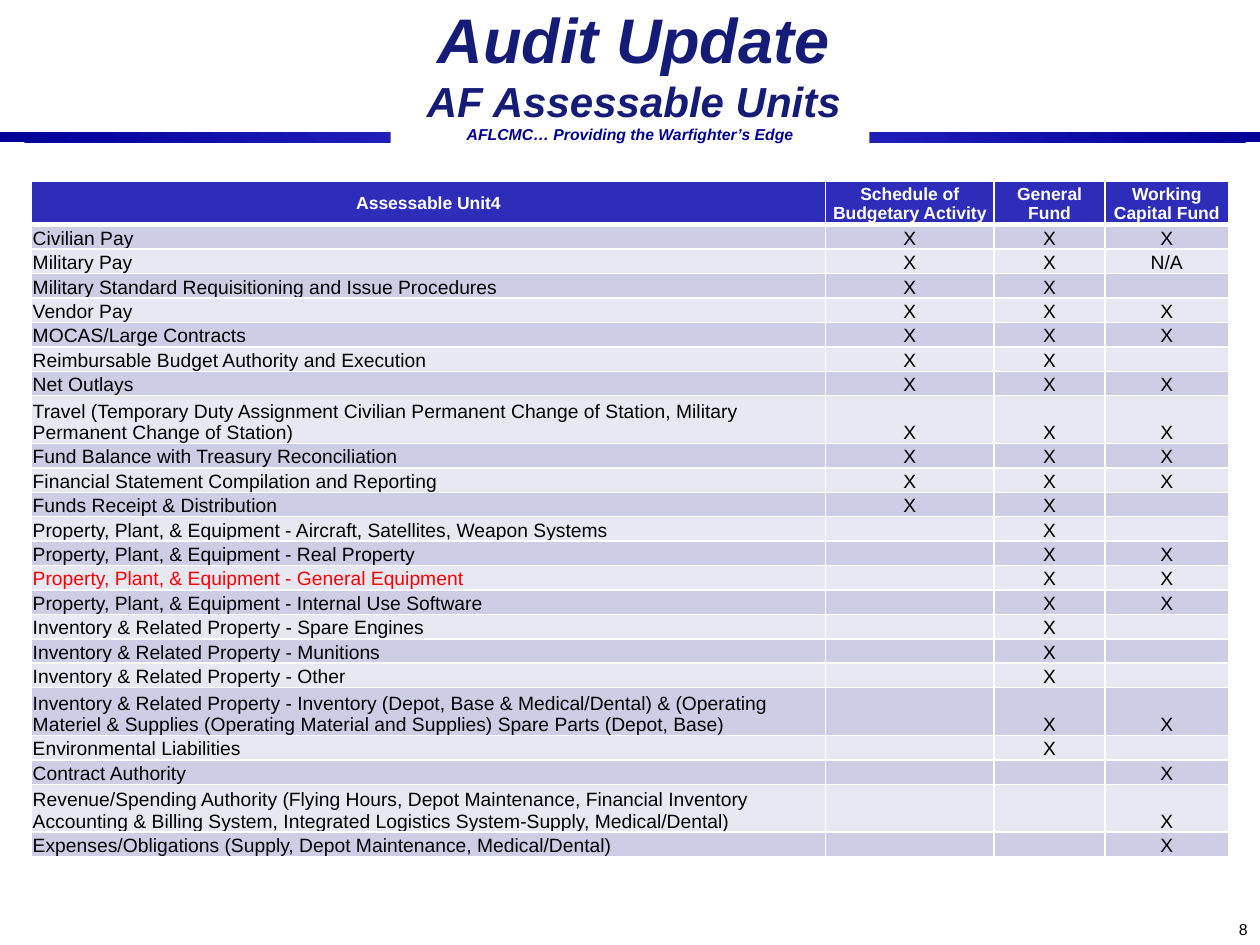
import copy

import pptx
import pptx.dml.color
import pptx.enum.shapes
import pptx.enum.text
import pptx.oxml
import pptx.oxml.ns
import pptx.util
from pptx.dml.color import RGBColor
from pptx.enum.text import MSO_ANCHOR, PP_ALIGN
from pptx.util import Inches

FONT = "Arial"
WHITE = RGBColor(0xFF, 0xFF, 0xFF)
BLACK = RGBColor(0x00, 0x00, 0x00)
RED = RGBColor(0xFF, 0x00, 0x00)
NAVY = RGBColor(0x15, 0x1C, 0x77)
DARK_BLUE = RGBColor(0x00, 0x00, 0x99)
BRIGHT_BLUE = RGBColor(0x33, 0x33, 0xCC)
HEADER_BLUE = RGBColor(0x2D, 0x2D, 0xB9)
BANDS = (RGBColor(0xCD, 0xCD, 0xE6), RGBColor(0xE8, 0xE8, 0xF3))

HEADERS = ("Assessable Unit4", "Schedule of Budgetary Activity", "General Fund",
           "Working Capital Fund")
COLUMN_WIDTHS = (6.3, 1.34, 0.88, 0.98)
HEADER_HEIGHT = 0.34
TWO_LINE_HEIGHT = 0.38
ONE_LINE_LIMIT = 100  # longer names wrap onto a second line

UNITS = (
    ("Civilian Pay", "X", "X", "X"),
    ("Military Pay", "X", "X", "N/A"),
    ("Military Standard Requisitioning and Issue Procedures", "X", "X", ""),
    ("Vendor Pay", "X", "X", "X"),
    ("MOCAS/Large Contracts", "X", "X", "X"),
    ("Reimbursable Budget Authority and Execution", "X", "X", ""),
    ("Net Outlays", "X", "X", "X"),
    ("Travel (Temporary Duty Assignment Civilian Permanent Change of Station, "
     "Military Permanent Change of Station)", "X", "X", "X"),
    ("Fund Balance with Treasury Reconciliation", "X", "X", "X"),
    ("Financial Statement Compilation and Reporting", "X", "X", "X"),
    ("Funds Receipt & Distribution", "X", "X", ""),
    ("Property, Plant, & Equipment - Aircraft, Satellites, Weapon Systems", "", "X", ""),
    ("Property, Plant, & Equipment - Real Property", "", "X", "X"),
    ("Property, Plant, & Equipment - General Equipment", "", "X", "X"),
    ("Property, Plant, & Equipment - Internal Use Software", "", "X", "X"),
    ("Inventory & Related Property - Spare Engines", "", "X", ""),
    ("Inventory & Related Property - Munitions", "", "X", ""),
    ("Inventory & Related Property - Other", "", "X", ""),
    ("Inventory & Related Property - Inventory (Depot, Base & Medical/Dental) & "
     "(Operating Materiel & Supplies (Operating Material and Supplies) Spare Parts "
     "(Depot, Base)", "", "X", "X"),
    ("Environmental Liabilities", "", "X", ""),
    ("Contract Authority", "", "", "X"),
    ("Revenue/Spending Authority (Flying Hours, Depot Maintenance, Financial Inventory "
     "Accounting & Billing System, Integrated Logistics System-Supply, Medical/Dental)",
     "", "", "X"),
    ("Expenses/Obligations (Supply, Depot Maintenance, Medical/Dental)", "", "", "X"),
)
HIGHLIGHTED = "Property, Plant, & Equipment - General Equipment"


def add_run(p, text, size, color, bold=False, italic=False):
    r = p.add_run()
    r.text = text
    r.font.name = FONT
    r.font.size = pptx.util.Pt(size)
    r.font.color.rgb = color
    r.font.bold = bold
    r.font.italic = italic


def add_rectangle(s, left, top, width, height):
    sp = s.shapes.add_shape(pptx.enum.shapes.MSO_SHAPE.RECTANGLE, Inches(left),
                            Inches(top), Inches(width), Inches(height))
    sp.shadow.inherit = False
    sp.line.fill.background()
    return sp


def add_rule(s, left, top, width, height):
    """Draw the band that is dark at both ends and bright in the middle."""
    sp = add_rectangle(s, left, top, width, height)
    sp.fill.gradient()
    sp.fill.gradient_angle = 45
    first, last = sp.fill.gradient_stops
    first.position, last.position = 0, 1
    first.color.rgb = last.color.rgb = DARK_BLUE
    stops = sp._element.spPr.find(".//" + pptx.oxml.ns.qn("a:gsLst"))
    stops.insert(1, copy.deepcopy(stops[0]))
    middle = sp.fill.gradient_stops[1]
    middle.position = 0.5
    middle.color.rgb = BRIGHT_BLUE


def add_motto(s, left, top, width, height):
    sp = add_rectangle(s, left, top, width, height)
    sp.fill.solid()
    sp.fill.fore_color.rgb = WHITE
    tf = sp.text_frame
    tf.word_wrap = True
    tf.margin_top = tf.margin_bottom = 0
    p = tf.paragraphs[0]
    p.alignment = PP_ALIGN.CENTER
    add_run(p, "AFLCMC… Providing the Warfighter’s Edge", 9, DARK_BLUE, True, True)


def fill_title(s, left, top, width, height):
    sp = s.shapes.title
    sp.left, sp.top = Inches(left), Inches(top)
    sp.width, sp.height = Inches(width), Inches(height)
    tf = sp.text_frame
    tf.auto_size = pptx.enum.text.MSO_AUTO_SIZE.NONE
    tf.vertical_anchor = MSO_ANCHOR.MIDDLE
    for i, (text, size) in enumerate((("Audit Update", 36), ("AF Assessable Units", 24))):
        p = tf.add_paragraph() if i else tf.paragraphs[0]
        p.alignment = PP_ALIGN.CENTER
        add_run(p, text, size, NAVY, True, True)


def add_page_number(s, left, top, width, height):
    tf = s.shapes.add_textbox(Inches(left), Inches(top), Inches(width),
                              Inches(height)).text_frame
    tf.word_wrap = True
    tf.vertical_anchor = MSO_ANCHOR.BOTTOM
    p = tf.paragraphs[0]
    p.alignment = PP_ALIGN.RIGHT
    add_run(p, "8", 9, BLACK)


def set_borders(cell, **widths):
    """Draw white borders 1 point wide, or as given by side."""
    tcPr = cell._tc.get_or_add_tcPr()
    for i, side in enumerate(("lnL", "lnR", "lnT", "lnB")):
        width = pptx.util.Pt(widths.get(side, 1))
        tcPr.insert(i, pptx.oxml.parse_xml(
            f'<a:{side} {pptx.oxml.ns.nsdecls("a")} w="{width}"><a:solidFill>'
            f'<a:srgbClr val="{WHITE}"/></a:solidFill></a:{side}>'))


def fill_cell(cell, text, fill, size, color, bold, anchor, alignment):
    cell.fill.solid()
    cell.fill.fore_color.rgb = fill
    cell.margin_left = cell.margin_right = cell.margin_top = Inches(0.01)
    cell.margin_bottom = 0
    cell.vertical_anchor = anchor
    p = cell.text_frame.paragraphs[0]
    p.alignment = alignment
    if text:
        add_run(p, text, size, color, bold)
    else:
        p._p.get_or_add_endParaRPr().set("sz", str(size * 100))


def add_units_table(s, left, top, width, height):
    table = s.shapes.add_table(len(UNITS) + 1, len(HEADERS), Inches(left), Inches(top),
                               Inches(width), Inches(height)).table
    table.horz_banding = False
    for column, column_width in zip(table.columns, COLUMN_WIDTHS):
        column.width = Inches(column_width)

    two_line = [len(unit[0]) > ONE_LINE_LIMIT for unit in UNITS]
    one_line_height = ((height - HEADER_HEIGHT - sum(two_line) * TWO_LINE_HEIGHT)
                       / two_line.count(False))

    table.rows[0].height = Inches(HEADER_HEIGHT)
    for c, text in enumerate(HEADERS):
        cell = table.cell(0, c)
        fill_cell(cell, text, HEADER_BLUE, 10, WHITE, True, MSO_ANCHOR.MIDDLE,
                  PP_ALIGN.CENTER)
        set_borders(cell, lnB=3)

    for i, unit in enumerate(UNITS):
        table.rows[i + 1].height = Inches(TWO_LINE_HEIGHT if two_line[i]
                                          else one_line_height)
        for c, text in enumerate(unit):
            cell = table.cell(i + 1, c)
            fill_cell(cell, text, BANDS[i % 2], 11, RED if text == HIGHLIGHTED else BLACK,
                      False, MSO_ANCHOR.BOTTOM, PP_ALIGN.CENTER if c else PP_ALIGN.LEFT)
            set_borders(cell, lnT=1 if i else 3)


def main():
    prs = pptx.Presentation()
    prs.slide_width, prs.slide_height = Inches(10), Inches(7.5)
    s = prs.slides.add_slide(prs.slide_layouts.get_by_name("Title Only"))
    add_rule(s, 0, 1.05, 10, 0.08)
    add_motto(s, 3.1, 0.99, 3.8, 0.15)
    add_page_number(s, 7.92, 7, 2.08, 0.5)
    fill_title(s, 0.43, 0, 9.2, 1)
    add_units_table(s, 0.25, 1.44, 9.5, 5.35)
    prs.save("out.pptx")


if __name__ == "__main__":
    main()
